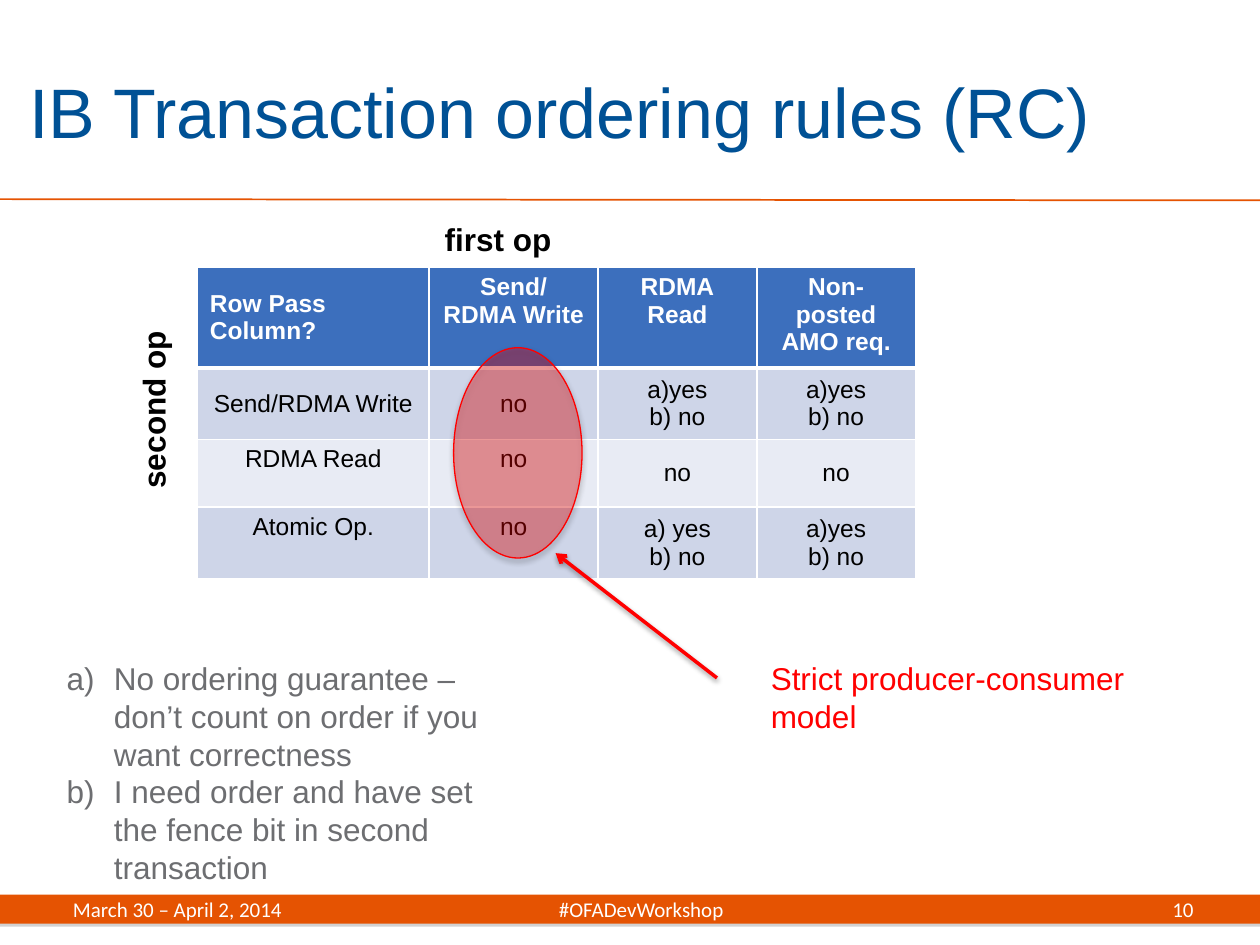
from dataclasses import dataclass

from lxml import etree
from pptx import Presentation
from pptx.dml.color import RGBColor
from pptx.enum import shapes, text
from pptx.oxml.ns import qn
from pptx.util import Pt


@dataclass(frozen=True)
class Theme:
    heading: str = "005195"
    orange: str = "E55302"
    header_fill: str = "3C6FBD"
    band_dark: str = "CED5E8"
    band_light: str = "E8EBF4"
    grey: str = "6D6E71"
    red: str = "FF0000"
    black: str = "000000"
    white: str = "FFFFFF"
    shadow: str = "808080"
    body_font: str = "Arial"
    footer_font: str = "Calibri"
    title_size: int = 40
    body_size: int = 18
    table_size: int = 14
    footer_size: int = 12


THEME = Theme()
MIDDLE, TOP = text.MSO_ANCHOR.MIDDLE, text.MSO_ANCHOR.TOP
LEFT, CENTER, RIGHT = text.PP_ALIGN.LEFT, text.PP_ALIGN.CENTER, text.PP_ALIGN.RIGHT

HEADINGS = ["Row Pass Column?", "Send/\nRDMA Write", "RDMA\nRead", "Non-posted AMO req."]
RULES = [
    ["Send/RDMA Write", "no", "a)yes\nb) no", "a)yes\nb) no"],
    ["RDMA Read", "no", "no", "no"],
    ["Atomic Op.", "no", "a) yes\nb) no", "a)yes\nb) no"],
]
NOTES = [
    "No ordering guarantee – don’t count on order if you want correctness",
    "I need order and have set the fence bit in second transaction",
]


def add_node(parent, tag, **attributes):
    node = etree.SubElement(parent, qn(tag))
    for name, value in attributes.items():
        node.set(name, str(value))
    return node


def write(para, words, size, color, bold=False, font=THEME.body_font, align=LEFT):
    """Fill a paragraph, with one run for each line of the words."""
    para.alignment = align
    for index, line in enumerate(words.split("\n")):
        if index:
            para.add_line_break()
        span = para.add_run()
        span.text = line
        span.font.name, span.font.size, span.font.bold = font, Pt(size), bold
        span.font.color.rgb = RGBColor.from_string(color)


def add_box(page, left, top, width, height, anchor=TOP):
    box = page.shapes.add_textbox(Pt(left), Pt(top), Pt(width), Pt(height))
    box.text_frame.word_wrap = True
    box.text_frame.vertical_anchor = anchor
    return box


def add_label(page, area, words, color, bold=False):
    box = add_box(page, *area)
    write(box.text_frame.paragraphs[0], words, THEME.body_size, color, bold)
    return box


def add_shadow(shape, color, opacity, blur, distance):
    """Cast a shadow straight down; call after fill and line are set."""
    properties = shape._element.spPr
    for old in properties.findall(qn("a:effectLst")):
        properties.remove(old)
    effects = add_node(properties, "a:effectLst")
    outer = add_node(effects, "a:outerShdw", blurRad=Pt(blur), dist=Pt(distance),
                     dir=90 * 60000, rotWithShape=0)
    add_node(add_node(outer, "a:srgbClr", val=color), "a:alpha", val=opacity * 1000)


def add_filled(page, kind, area, color):
    shape = page.shapes.add_shape(kind, *(Pt(value) for value in area))
    shape.shadow.inherit = False
    shape.fill.solid()
    shape.fill.fore_color.rgb = RGBColor.from_string(color)
    shape.line.fill.background()
    return shape


def add_line(page, start, end, color, width):
    line = page.shapes.add_connector(shapes.MSO_CONNECTOR.STRAIGHT,
                                     *(Pt(value) for value in (*start, *end)))
    line.line.color.rgb = RGBColor.from_string(color)
    line.line.width = Pt(width)
    add_node(line._element.spPr, "a:effectLst")
    return line


def add_title(page, words):
    title = page.shapes.title
    title.left, title.top, title.width, title.height = Pt(9.4), Pt(18), Pt(661.7), Pt(90)
    frame = title.text_frame
    frame.vertical_anchor, frame.auto_size = MIDDLE, text.MSO_AUTO_SIZE.NONE
    write(frame.paragraphs[0], words, THEME.title_size, THEME.heading)


def add_footer(page):
    bar = add_filled(page, shapes.MSO_SHAPE.RECTANGLE, (0, 511.2, 720, 16.6), THEME.orange)
    add_shadow(bar, THEME.shadow, 35, 0, 1.8)
    date = add_box(page, 34.6, 511.2, 651.6, 16.6, MIDDLE).text_frame.paragraphs[0]
    tabs = add_node(date._p.get_or_add_pPr(), "a:tabLst")
    add_node(tabs, "a:tab", pos=Pt(324.7), algn="ctr")
    number = add_box(page, 603.4, 511.2, 85.7, 16.6, MIDDLE).text_frame.paragraphs[0]
    for para, words, align in ((date, "March 30 – April 2, 2014\t#OFADevWorkshop", LEFT),
                               (number, "10", RIGHT)):
        write(para, words, THEME.footer_size, THEME.white, font=THEME.footer_font, align=align)


def set_borders(cell, top, bottom):
    properties = cell._tc.get_or_add_tcPr()
    for side, width in (("L", 1), ("R", 1), ("T", top), ("B", bottom)):
        edge = add_node(properties, f"a:ln{side}", w=Pt(width))
        add_node(add_node(edge, "a:solidFill"), "a:srgbClr", val=THEME.white)


def add_rules_table(page):
    widths, heights = (132.5, 96.5, 90.7, 90.7), (53.6, 38.7, 38.7, 38.7)
    frame = page.shapes.add_table(len(heights), len(widths), Pt(112.8), Pt(152.6),
                                  Pt(sum(widths)), Pt(sum(heights)))
    table = frame.table
    for column, width in zip(table.columns, widths):
        column.width = Pt(width)
    for row, height in zip(table.rows, heights):
        row.height = Pt(height)
    for r, line in enumerate([HEADINGS, *RULES]):
        header = r == 0
        fill = THEME.header_fill if header else (THEME.band_light, THEME.band_dark)[r % 2]
        for c, words in enumerate(line):
            cell = table.cell(r, c)
            set_borders(cell, 3 if r == 1 else 1, 3 if header else 1)
            cell.fill.solid()
            cell.fill.fore_color.rgb = RGBColor.from_string(fill)
            at_top = c > 0 if header else r > 1 and c < 2
            cell.vertical_anchor = TOP if at_top else MIDDLE
            write(cell.text_frame.paragraphs[0], words, THEME.table_size,
                  THEME.white if header else THEME.black, header,
                  align=LEFT if header and c == 0 else CENTER)


def add_notes_list(page):
    frame = add_box(page, 31, 373, 267.1, 159.8).text_frame
    for index, note in enumerate(NOTES):
        para = frame.add_paragraph() if index else frame.paragraphs[0]
        properties = para._p.get_or_add_pPr()
        properties.set("marL", str(Pt(27)))
        properties.set("indent", str(Pt(-27)))
        add_node(properties, "a:buFont", typeface=THEME.body_font)
        add_node(properties, "a:buAutoNum", type="alphaLcParenR")
        write(para, note, THEME.body_size, THEME.grey)


def add_highlight(page):
    oval = add_filled(page, shapes.MSO_SHAPE.OVAL, (259.2, 198.7, 73.4, 120.2), THEME.red)
    color = oval._element.spPr.find(qn("a:solidFill")).find(qn("a:srgbClr"))
    add_node(color, "a:alpha", val=33000)
    oval.line.color.rgb = RGBColor.from_string(THEME.red)
    oval.line.width = Pt(0.75)
    add_shadow(oval, THEME.black, 35, 3.1, 1.8)
    arrow = add_line(page, (409.7, 387.4), (317.5, 316.1), THEME.red, 2)
    add_node(arrow._element.spPr.find(qn("a:ln")), "a:tailEnd", type="arrow")
    add_shadow(arrow, THEME.black, 38, 3.1, 1.6)


def main():
    deck = Presentation()
    deck.slide_width, deck.slide_height = Pt(720), Pt(540)
    page = deck.slides.add_slide(deck.slide_layouts.get_by_name("Title Only"))
    add_title(page, "IB Transaction ordering rules (RC)")
    add_footer(page)
    add_line(page, (0, 113.8), (720, 114.5), THEME.orange, 1)
    add_rules_table(page)
    add_notes_list(page)
    add_highlight(page)
    add_label(page, (433.4, 373, 228.2, 51.1), "Strict producer-consumer model", THEME.red)
    add_label(page, (247, 122.4, 247.7, 29.5), "first op", THEME.black, True)
    side = add_label(page, (-36, 147.6, 247.7, 29.5), "second op", THEME.black, True)
    side.rotation = 270
    deck.save("out.pptx")


if __name__ == "__main__":
    main()
